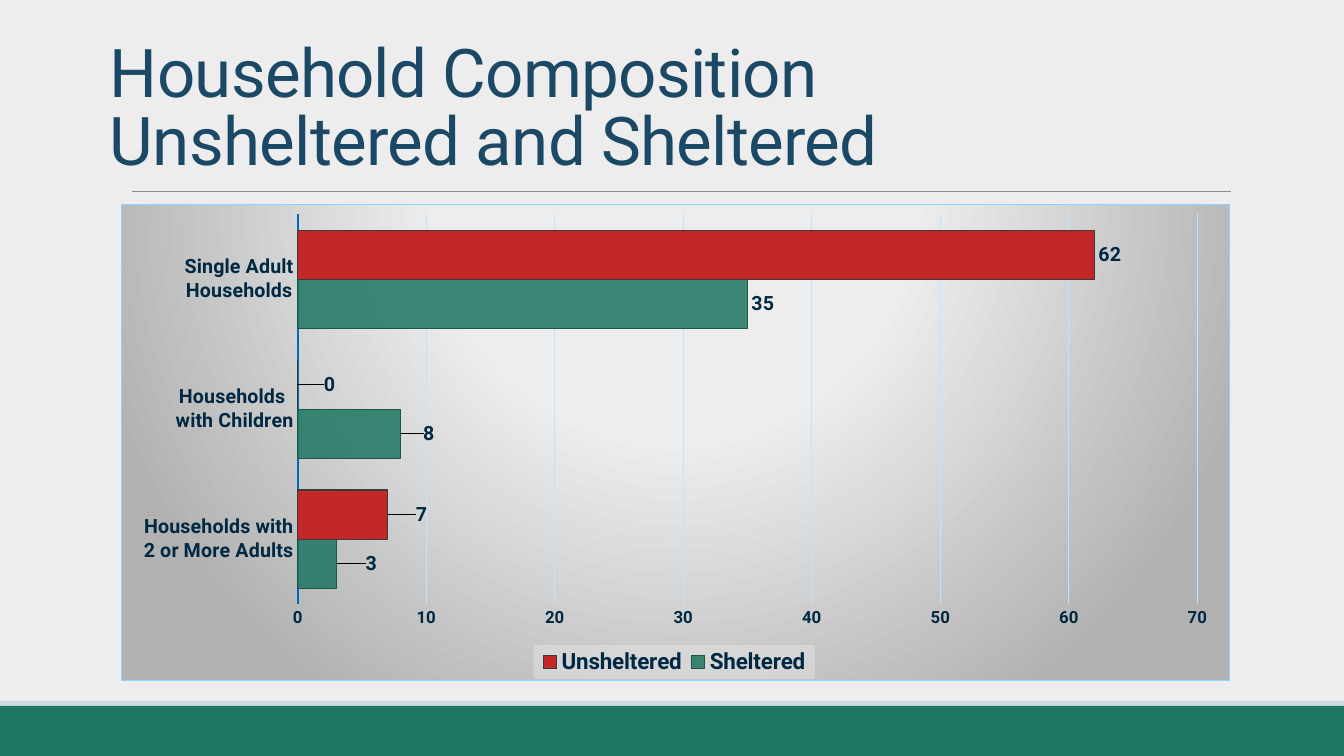
from lxml import etree
from pptx import Presentation
from pptx.chart.data import CategoryChartData
from pptx.dml.color import RGBColor
from pptx.enum import chart as ch, shapes, text
from pptx.oxml import parse_xml
from pptx.oxml.ns import nsdecls, qn
from pptx.util import Inches, Pt

PALE = RGBColor(0xED, 0xED, 0xED)
SHADE = RGBColor(0xB2, 0xB2, 0xB2)
GREEN = RGBColor(0x1E, 0x75, 0x61)
FOREST = RGBColor(0x17, 0x58, 0x49)
RED = RGBColor(0xC3, 0x27, 0x27)
COAL = RGBColor(0x38, 0x3B, 0x3A)
MIST = RGBColor(0xCE, 0xDB, 0xE2)
GRAY = RGBColor(0x8C, 0x8C, 0x8C)
NAVY = RGBColor(0x1B, 0x49, 0x65)
INK = RGBColor(0x00, 0x28, 0x42)
BLUE = RGBColor(0x00, 0x6B, 0xB1)
SKY = RGBColor(0xBC, 0xE5, 0xFF)
EDGE = RGBColor(0x90, 0xD3, 0xFF)
FONT = "Roboto"

CATS = ["Households with\n2 or More Adults", "Households \nwith Children",
        "Single Adult\nHouseholds"]
# name, values, fill, outline, label shifts for the first points
SERIES = [
    ("Sheltered", (3, 8, 35), GREEN, FOREST, (0.023, 0.017)),
    ("Unsheltered", (7, 0, 62), RED, COAL, (0.022, 0.02)),
]


def style(font, size, color=INK, bold=True):
    font.name, font.size, font.bold = FONT, Pt(size), bold
    font.color.rgb = color


def stroke(line, color, width):
    line.color.rgb = color
    line.width = Pt(width)


def write(frame, words, size, color, bold=False, gap=1.0, track=0):
    para = frame.paragraphs[0]
    para.text = words
    para.line_spacing = gap
    para.alignment = text.PP_ALIGN.LEFT
    for run in para.runs:
        style(run.font, size, color, bold)
        run.font._element.set("spc", str(track))


def band(slide, top, height, color):
    bar = slide.shapes.add_shape(shapes.MSO_SHAPE.RECTANGLE, 0, Inches(top),
                                 Inches(13.33), Inches(height))
    bar.shadow.inherit = False
    bar.fill.solid()
    bar.fill.fore_color.rgb = color
    bar.line.fill.background()


def rule(slide, left, right, top):
    line = slide.shapes.add_connector(shapes.MSO_CONNECTOR.STRAIGHT, Inches(left),
                                      Inches(top), Inches(right), Inches(top))
    stroke(line.line, GRAY, 0.5)
    etree.SubElement(line._element.spPr, qn("a:effectLst"))


def head(slide):
    title = slide.shapes.title
    title.left, title.top = Inches(0.99), Inches(0.24)
    title.width, title.height = Inches(11.33), Inches(1.59)
    frame = title.text_frame
    frame.word_wrap = True
    frame.auto_size = text.MSO_AUTO_SIZE.NONE
    frame.vertical_anchor = text.MSO_ANCHOR.BOTTOM
    write(frame, "Household Composition \vUnsheltered and Sheltered", 48, NAVY,
          gap=0.85, track=-50)


def layout(inner=False, **places):
    """Manual chart layout from fractions of the chart's size."""
    target = '<c:layoutTarget val="inner"/>' if inner else ""
    modes = "".join(f'<c:{k}Mode val="edge"/>' for k in "xy") if "w" in places else ""
    spots = "".join(f'<c:{k} val="{v}"/>' for k, v in places.items())
    return parse_xml(f'<c:layout {nsdecls("c")}><c:manualLayout>{target}{modes}{spots}'
                     '</c:manualLayout></c:layout>')


def place(parent, after, node):
    """Put a layout behind the named child, in place of any other."""
    for old in parent.findall(qn("c:layout")):
        parent.remove(old)
    if after is None:
        parent.insert(0, node)
    else:
        parent.find(qn(after)).addnext(node)


def panel(root):
    """Radial backdrop and border of the chart."""
    stops = "".join(f'<a:gs pos="{pos}000"><a:srgbClr val="{color}"/></a:gs>'
                    for pos, color in ((0, PALE), (39, PALE), (100, SHADE)))
    root.find(qn("c:chart")).addnext(parse_xml(
        f'<c:spPr {nsdecls("c", "a")}><a:gradFill><a:gsLst>{stops}</a:gsLst>'
        '<a:path path="circle"><a:fillToRect l="50000" t="-80000" r="50000" b="180000"/>'
        f'</a:path></a:gradFill><a:ln w="{Pt(0.75)}"><a:solidFill>'
        f'<a:srgbClr val="{EDGE}"/></a:solidFill></a:ln></c:spPr>'))


def paint(series, fill, edge, shifts):
    form = series.format
    form.fill.solid()
    form.fill.fore_color.rgb = fill
    stroke(form.line, edge, 0.75)
    series.invert_if_negative = False
    if fill == GREEN:
        tint = series._element.find(".//" + qn("a:srgbClr"))
        etree.SubElement(tint, qn("a:alpha"), val="85000")
    labels = series.data_labels
    labels.show_value = True
    labels.position = ch.XL_LABEL_POSITION.OUTSIDE_END
    style(labels.font, 14)
    for spot, shift in enumerate(shifts):
        label = series.points[spot].data_label
        label.position = ch.XL_LABEL_POSITION.OUTSIDE_END
        style(label.font, 14)
    for node, shift in zip(series._element.iter(qn("c:dLbl")), shifts):
        place(node, "c:idx", layout(x=shift, y=0))


def axes(chart):
    cat, val = chart.category_axis, chart.value_axis
    for axis, size in ((cat, 14), (val, 12)):
        axis.major_tick_mark = axis.minor_tick_mark = ch.XL_TICK_MARK.NONE
        style(axis.tick_labels.font, size)
    stroke(cat.format.line, BLUE, 1.5)
    val.format.line.fill.background()
    val.minimum_scale, val.maximum_scale, val.major_unit = 0, 70, 10
    val.has_major_gridlines = True
    stroke(val.major_gridlines.format.line, SKY, 0.75)


def key(chart):
    chart.has_legend = True
    legend = chart.legend
    legend.position = ch.XL_LEGEND_POSITION.BOTTOM
    legend.include_in_layout = False
    style(legend.font, 16)
    node = legend._element
    place(node, "c:legendPos", layout(x=0.372, y=0.925, w=0.254, h=0.071))
    node.find(qn("c:overlay")).addnext(parse_xml(
        f'<c:spPr {nsdecls("c", "a")}><a:solidFill><a:srgbClr val="{PALE}">'
        '<a:alpha val="39000"/></a:srgbClr></a:solidFill></c:spPr>'))


def bars(slide):
    data = CategoryChartData()
    data.categories = CATS
    for name, values, *_ in SERIES:
        data.add_series(name, values)
    chart = slide.shapes.add_chart(ch.XL_CHART_TYPE.BAR_CLUSTERED, Inches(1.2),
                                   Inches(2.02), Inches(11), Inches(4.74), data).chart
    chart.has_title = False
    style(chart.font, 10, bold=False)
    plot = chart.plots[0]
    plot.gap_width, plot.overlap, plot.vary_by_categories = 65, 0, False
    for series, (_, _, fill, edge, shifts) in zip(plot.series, SERIES):
        paint(series, fill, edge, shifts)
    axes(chart)
    key(chart)
    root = chart._chartSpace
    place(root.find(".//" + qn("c:plotArea")), None,
          layout(inner=True, x=0.159, y=0.021, w=0.812, h=0.818))
    panel(root)


def main():
    deck = Presentation()
    deck.slide_width, deck.slide_height = Inches(13.33), Inches(7.5)
    slide = deck.slides.add_slide(deck.slide_layouts[5])
    slide.background.fill.solid()
    slide.background.fill.fore_color.rgb = PALE
    band(slide, 7, 0.5, GREEN)
    band(slide, 6.95, 0.05, MIST)
    rule(slide, 1.31, 12.21, 1.9)
    head(slide)
    bars(slide)
    deck.save("out.pptx")


if __name__ == "__main__":
    main()
